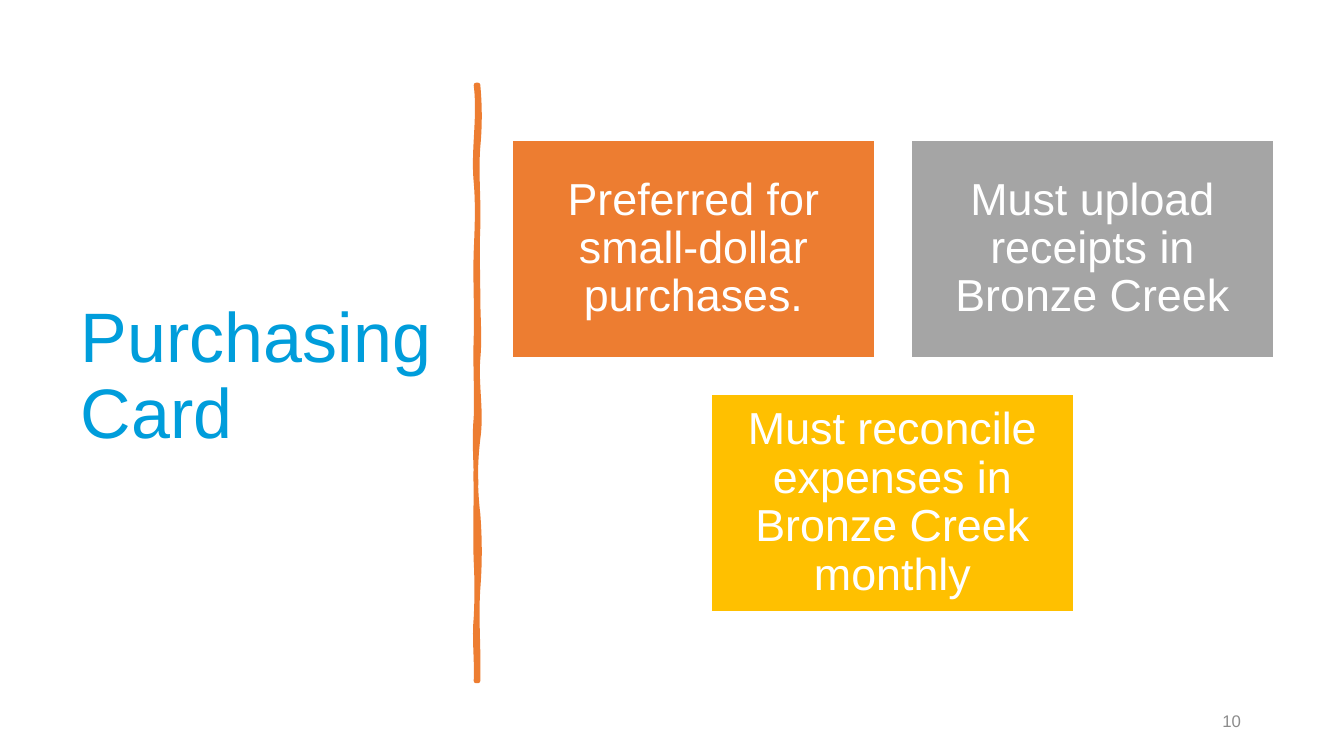
from dataclasses import dataclass

from lxml import etree
from pptx import Presentation
from pptx import util as u
from pptx.dml import color
from pptx.enum import shapes, text
from pptx.oxml import ns

EMU_PER_PX = 914400 / 100.8


@dataclass(frozen=True)
class Theme:
    font: str = "Arial"
    blue: str = "009DDB"
    orange: str = "ED7D31"
    gray: str = "A5A5A5"
    gold: str = "FFC000"
    white: str = "FFFFFF"
    muted: str = "8C8C8C"
    title_size: int = 50
    card_size: int = 32
    number_size: int = 12
    stroke: float = 3.25


THEME = Theme()
CARDS = [
    ("Preferred for small-dollar purchases.", THEME.orange),
    ("Must upload receipts in Bronze Creek", THEME.gray),
    ("Must reconcile expenses in Bronze Creek monthly", THEME.gold),
]
RIGHT_EDGE = [(62, 2, 2), (143, -2, 1), (211, -1, 0), (274, 0, 2),
              (354, -2, 4), (429, -3, -3), (504, 2, 2), (596, -2, 1)]
LEFT_EDGE = [(533, 1, -2), (476, 1, 1), (396, -1, 0), (333, 0, -2),
             (253, 1, -1), (167, 1, -1), (97, 1, 2), (0, -3, 4)]


def px(value):
    return u.Emu(round(value * EMU_PER_PX))


def rgb(value):
    return color.RGBColor.from_string(value)


def paint(shape, fill, line, width):
    shape.shadow.inherit = False
    shape.fill.solid()
    shape.fill.fore_color.rgb = rgb(fill)
    shape.line.color.rgb = rgb(line)
    shape.line.width = u.Pt(width)


def write(shape, words, size, ink, align, inset=10, spacing=1.0):
    frame = shape.text_frame
    frame_format = {
        "word_wrap": True,
        "vertical_anchor": text.MSO_ANCHOR.MIDDLE,
        "margin_left": px(inset),
        "margin_right": px(inset),
        "margin_top": px(inset // 2),
        "margin_bottom": px(inset // 2),
    }
    for name, value in frame_format.items():
        setattr(frame, name, value)
    paragraph = frame.paragraphs[0]
    paragraph.alignment = align
    paragraph.line_spacing = spacing
    run = paragraph.add_run()
    run.text = words
    for name, value in {"name": THEME.font, "size": u.Pt(size)}.items():
        setattr(run.font, name, value)
    run.font.color.rgb = rgb(ink)


def add_title(slide, box):
    shape = slide.shapes.add_textbox(*map(px, box))
    write(shape, "Purchasing Card", THEME.title_size, THEME.blue,
          text.PP_ALIGN.LEFT, spacing=0.9)


def curve_points(x, start, segments):
    for end, first, second in segments:
        third = (end - start) / 3
        yield x + first, start + third
        yield x + second, end - third
        yield x, end
        start = end


def bend_lines(shape):
    lines = list(shape.element.iter(ns.qn("a:lnTo")))
    for index in range(0, len(lines) - 2, 3):
        curve = etree.Element(ns.qn("a:cubicBezTo"))
        lines[index].addprevious(curve)
        for line in lines[index:index + 3]:
            curve.append(line[0])
            line.getparent().remove(line)


def add_divider(slide, box):
    left, top, width, height = box
    right_side = [*curve_points(width, 0, RIGHT_EDGE)]
    bottom = [(width * 2 / 3, height), (width / 3, height), (0, height)]
    left_side = [*curve_points(0, height, LEFT_EDGE)]
    builder = slide.shapes.build_freeform(px(left + width), px(top))
    builder.add_line_segments(
        [(px(left + x), px(top + y))
         for x, y in right_side + bottom + left_side], close=True)
    shape = builder.convert_to_shape()
    bend_lines(shape)
    paint(shape, THEME.orange, THEME.orange, THEME.stroke)


def add_cards(slide, box, columns=2, gap=36):
    left, top, width, height = box
    rows = -(-len(CARDS) // columns)
    card_width = (width - gap * (columns - 1)) // columns
    card_height = (height - gap * (rows - 1)) // rows
    for index, (words, fill) in enumerate(CARDS):
        row, column = divmod(index, columns)
        count = min(columns, len(CARDS) - row * columns)
        row_width = count * card_width + (count - 1) * gap
        x = left + (width - row_width) // 2 + column * (card_width + gap)
        y = top + row * (card_height + gap)
        card = slide.shapes.add_shape(
            shapes.MSO_SHAPE.RECTANGLE,
            *map(px, (x, y, card_width, card_height)))
        paint(card, fill, THEME.white, 1)
        write(card, words, THEME.card_size, THEME.white,
              text.PP_ALIGN.CENTER, inset=13, spacing=0.9)


def add_number(slide, box):
    shape = slide.shapes.add_textbox(*map(px, box))
    write(shape, "10", THEME.number_size, THEME.muted, text.PP_ALIGN.RIGHT)


def main():
    presentation = Presentation()
    presentation.slide_width = px(1344)
    presentation.slide_height = px(756)
    slide = presentation.slides.add_slide(presentation.slide_layouts[6])
    add_title(slide, (71, 70, 376, 616))
    add_divider(slide, (476, 85, 2, 596))
    add_number(slide, (949, 701, 302, 40))
    add_cards(slide, (512, 140, 762, 472))
    presentation.save("out.pptx")


if __name__ == "__main__":
    main()
